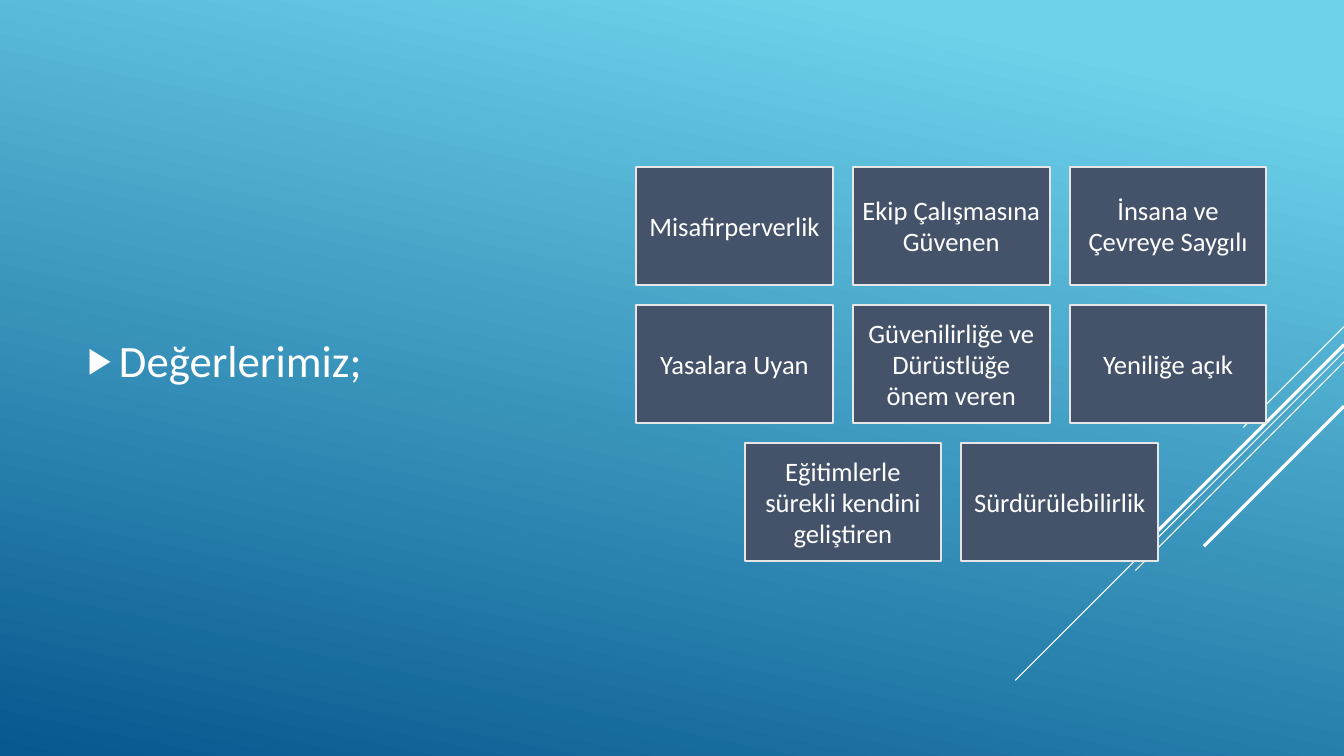
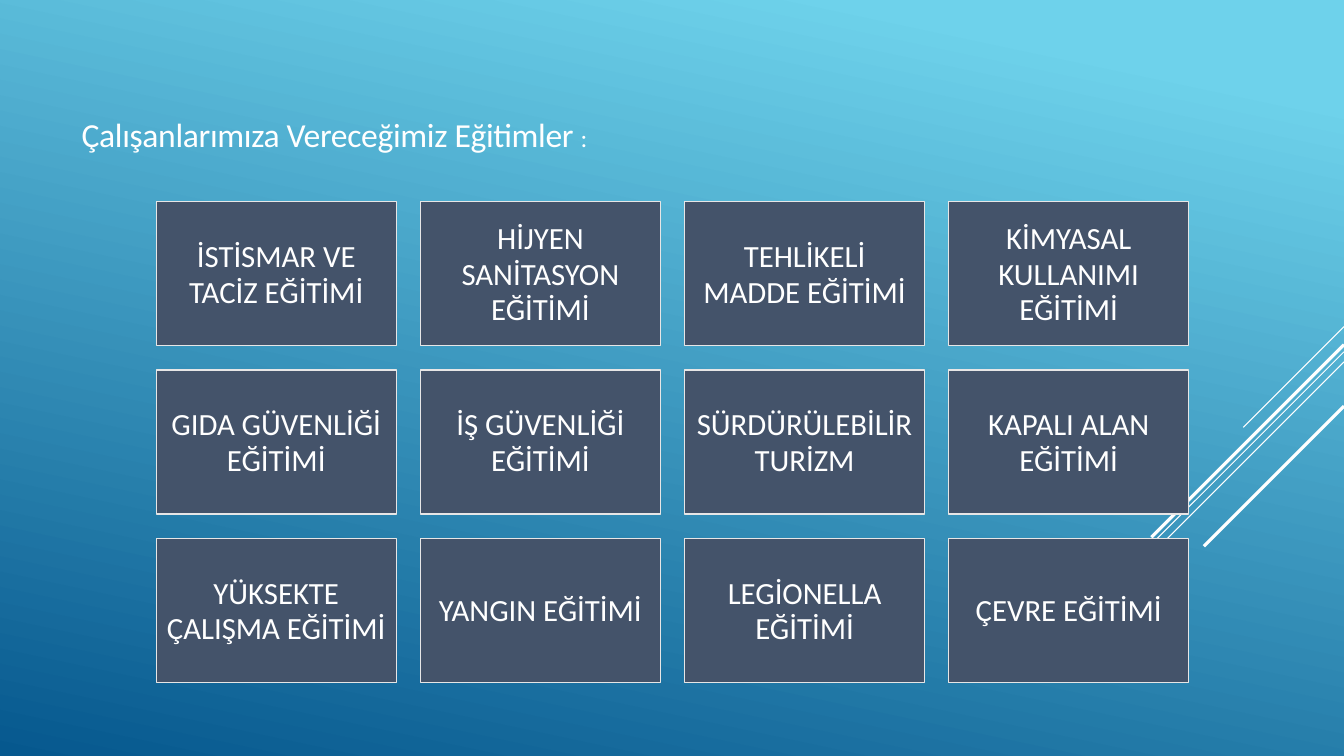
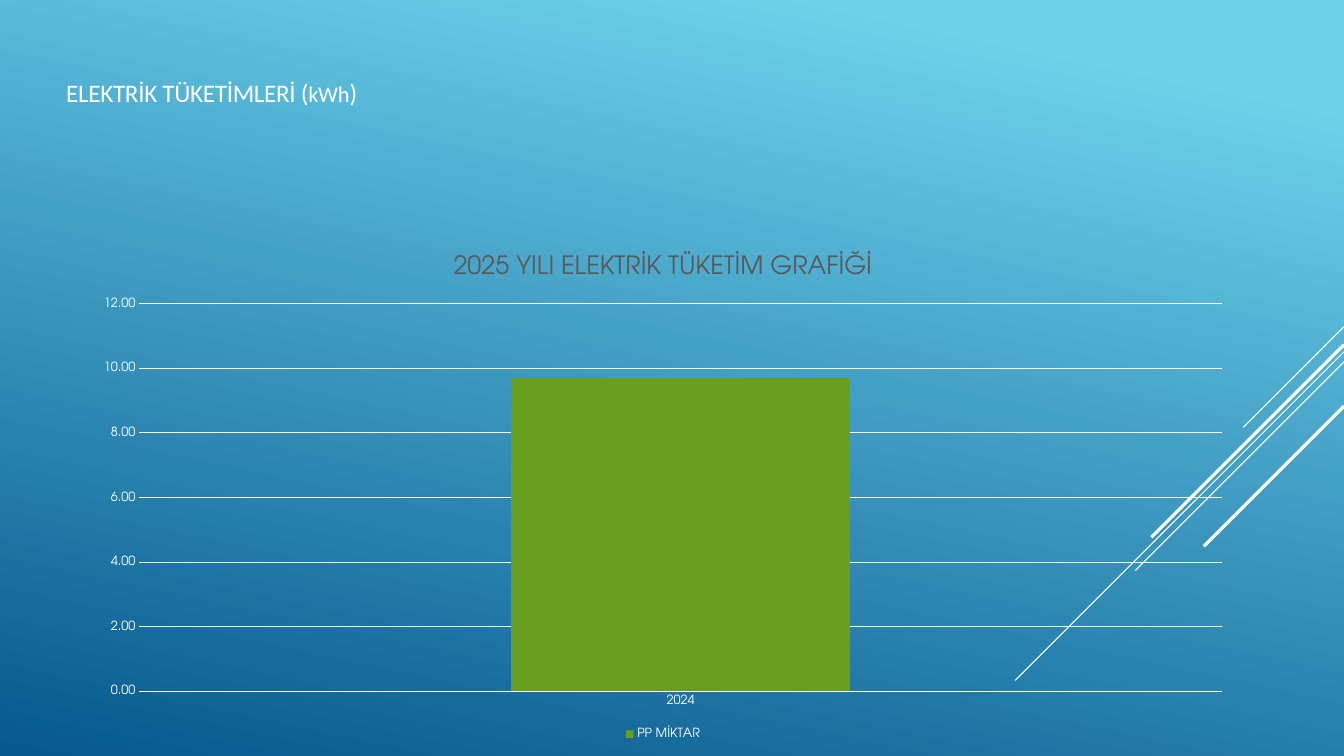
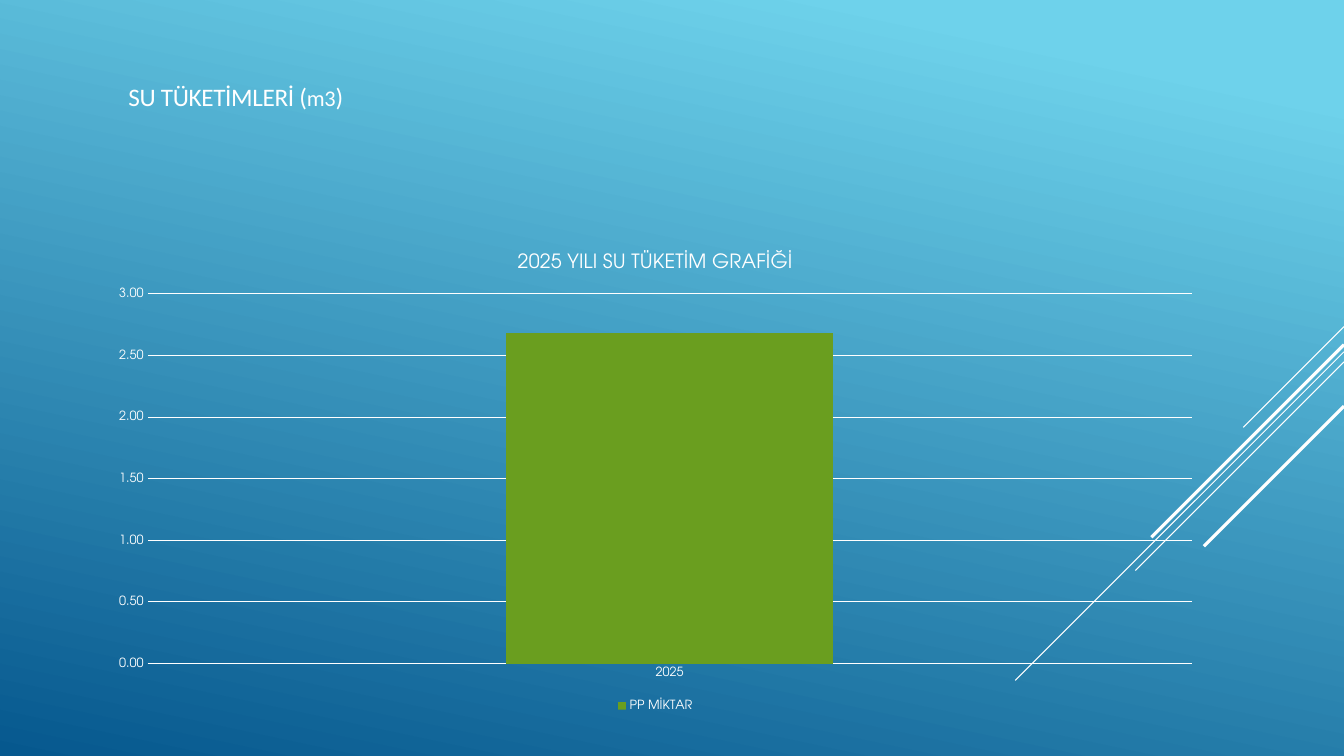
from lxml.etree import SubElement
from pptx import Presentation
from pptx.chart.data import CategoryChartData
from pptx.dml.color import RGBColor
from pptx.enum.chart import XL_CHART_TYPE as ChartType
from pptx.enum.chart import XL_LEGEND_POSITION as LegendPosition
from pptx.enum.chart import XL_TICK_MARK as TickMark
from pptx.enum.shapes import MSO_CONNECTOR as Connector
from pptx.enum.shapes import MSO_SHAPE as Shape
from pptx.enum.text import MSO_ANCHOR as Anchor
from pptx.enum.text import MSO_AUTO_SIZE as AutoSize
from pptx.enum.text import PP_ALIGN as Align
from pptx.oxml.ns import qn
from pptx.util import Inches, Pt

WHITE = "FFFFFF"
CARD_FILL = "44536A"
CARD_BORDER = "E7E6E6"
BAR_GREEN = "6A9E1F"
TITLE_GREY = "595959"
SKY = "6ED2EB"
DEEP_BLUE = "06588E"
TEXT_FONT = "Calibri"
CHART_FONT = "TeX Gyre Adventor"

CONTENT_LAYOUT, TITLE_LAYOUT = 1, 5
RIGHT_EDGE = 13.33
# Height at the right edge, run down to the left, line width
DIAGONALS = [
    (3.24, 1.0, 0.75),
    (3.49, 3.26, 0.75),
    (3.59, 2.07, 0.75),
    (3.42, 1.91, 2.25),
    (4.03, 1.39, 2.25),
]

VALUES = [
    ["Misafirperverlik", "Ekip Çalışmasına\nGüvenen", "İnsana ve\nÇevreye Saygılı"],
    ["Yasalara Uyan", "Güvenilirliğe ve\vDürüstlüğe\vönem veren", "Yeniliğe açık"],
    ["Eğitimlerle\vsürekli kendini\vgeliştiren", "Sürdürülebilirlik"],
]
TRAININGS = [
    ["İSTİSMAR VE\nTACİZ EĞİTİMİ", "HİJYEN\nSANİTASYON\nEĞİTİMİ",
     "TEHLİKELİ\nMADDE EĞİTİMİ", "KİMYASAL\vKULLANIMI\vEĞİTİMİ"],
    ["GIDA GÜVENLİĞİ\nEĞİTİMİ", "İŞ GÜVENLİĞİ\nEĞİTİMİ",
     "SÜRDÜRÜLEBİLİR\nTURİZM", "KAPALI ALAN\nEĞİTİMİ"],
    ["YÜKSEKTE\nÇALIŞMA EĞİTİMİ", "YANGIN EĞİTİMİ",
     "LEGİONELLA\nEĞİTİMİ", "ÇEVRE EĞİTİMİ"],
]


def rgb(color):
    return RGBColor.from_string(color)


def set_font(font, size, color=WHITE, name=TEXT_FONT):
    font.name = name
    font.size = Pt(size)
    font.bold = False
    font.color.rgb = rgb(color)


def place(shape, box):
    shape.left, shape.top, shape.width, shape.height = map(Inches, box)


class Deck:
    """Holds the shared style and the slide being filled."""

    def __init__(self):
        self.prs = Presentation()
        self.prs.slide_width = Inches(RIGHT_EDGE)
        self.prs.slide_height = Inches(7.5)
        self.slide = None

    def new_slide(self, layout):
        self.slide = self.prs.slides.add_slide(self.prs.slide_layouts[layout])

    def style_master(self):
        """Give the master its gradient and diagonals, drawn on the current slide and moved."""
        master = self.prs.slide_master
        fill = master.background.fill
        fill.gradient()
        fill.gradient_angle = 360 - 102
        for stop, position, color in zip(fill.gradient_stops, (0.1, 1), (SKY, DEEP_BLUE)):
            stop.position = position
            stop.color.rgb = rgb(color)
        for number, (top, run, width) in enumerate(DIAGONALS, 20):
            diagonal = self.slide.shapes.add_connector(
                Connector.STRAIGHT, Inches(RIGHT_EDGE), Inches(top),
                Inches(RIGHT_EDGE - run), Inches(top + run))
            diagonal.line.color.rgb = rgb(WHITE)
            diagonal.line.width = Pt(width)
            SubElement(diagonal.element.spPr, qn("a:effectLst"))
            diagonal.element.nvCxnSpPr.cNvPr.id = number
            master.element.cSld.spTree.append(diagonal.element)

    def title(self, parts, box, align=Align.LEFT):
        """Fill the title with (text, size) parts."""
        title = self.slide.shapes.title
        place(title, box)
        frame = title.text_frame
        frame.word_wrap = True
        frame.auto_size = AutoSize.NONE
        frame.vertical_anchor = Anchor.MIDDLE
        paragraph = frame.paragraphs[0]
        paragraph.alignment = align
        for text, size in parts:
            run = paragraph.add_run()
            run.text = text
            set_font(run.font, size)
        for properties in title.element.iter(qn("a:rPr")):
            properties.set("spc", "-25")

    def bullet(self, text, box):
        """Fill the body with one bullet and drop the unused title."""
        heading = self.slide.shapes.title.element
        heading.getparent().remove(heading)
        body = self.slide.placeholders[1]
        place(body, box)
        frame = body.text_frame
        frame.text = text
        frame.auto_size = AutoSize.NONE
        frame.vertical_anchor = Anchor.MIDDLE
        paragraph = frame.paragraphs[0]
        paragraph.space_before = Pt(0)
        set_font(paragraph.font, 32)
        for properties in body.element.iter(qn("a:pPr")):
            properties.set("marL", str(Inches(0.31)))
            properties.set("indent", str(-Inches(0.31)))
            marks = [SubElement(properties, qn("a:buClr")),
                     SubElement(properties, qn("a:buSzPct"), val="80000"),
                     SubElement(properties, qn("a:buChar"), char="▶")]
            SubElement(marks[0], qn("a:srgbClr"), val=WHITE)
            run_defaults = properties.find(qn("a:defRPr"))
            if run_defaults is not None:
                properties.append(run_defaults)

    def card(self, text, box, size, leading, border):
        card = self.slide.shapes.add_shape(Shape.RECTANGLE, *map(Inches, box))
        card.shadow.inherit = False
        card.fill.solid()
        card.fill.fore_color.rgb = rgb(CARD_FILL)
        card.line.color.rgb = rgb(CARD_BORDER)
        card.line.width = Pt(border)
        frame = card.text_frame
        frame.margin_left = frame.margin_right = 0
        frame.margin_top = frame.margin_bottom = 0
        frame.word_wrap = True
        frame.vertical_anchor = Anchor.MIDDLE
        frame.text = text
        for paragraph in frame.paragraphs:
            paragraph.alignment = Align.CENTER
            paragraph.line_spacing = Pt(leading)
            set_font(paragraph.font, size)

    def card_grid(self, rows, left, top, width, height, gap, **style):
        """Lay out rows of cards, centring rows shorter than the first."""
        for row_index, row in enumerate(rows):
            inset = (len(rows[0]) - len(row)) * (width + gap) / 2
            for column, text in enumerate(row):
                box = (left + inset + column * (width + gap),
                       top + row_index * (height + gap), width, height)
                self.card(text, box, **style)

    def usage_chart(self, title, year, amount, box, title_size, title_color):
        data = CategoryChartData(number_format="0.00")
        data.categories = [year]
        data.add_series("PP MİKTAR", [amount])
        chart = self.slide.shapes.add_chart(
            ChartType.COLUMN_CLUSTERED, *map(Inches, box), data).chart
        set_font(chart.font, 10, name=CHART_FONT)

        chart.has_title = True
        chart.chart_title.include_in_layout = False
        heading = chart.chart_title.text_frame
        heading.text = title
        set_font(heading.paragraphs[0].font, title_size, title_color, CHART_FONT)

        chart.has_legend = True
        chart.legend.position = LegendPosition.BOTTOM
        chart.legend.include_in_layout = False
        set_font(chart.legend.font, 9, name=CHART_FONT)

        years, amounts = chart.category_axis, chart.value_axis
        for axis in (years, amounts):
            axis.major_tick_mark = axis.minor_tick_mark = TickMark.NONE
            set_font(axis.tick_labels.font, 9, name=CHART_FONT)
        amounts.has_major_gridlines = True
        for line in (years.format.line, amounts.major_gridlines.format.line):
            line.color.rgb = rgb(WHITE)
            line.width = Pt(0.75)
        amounts.format.line.fill.background()
        amounts.tick_labels.number_format = "0.00"
        amounts.tick_labels.number_format_is_linked = False

        plot = chart.plots[0]
        plot.gap_width = 219
        plot.overlap = -27
        plot.vary_by_categories = False
        bar = plot.series[0].format.fill
        bar.solid()
        bar.fore_color.rgb = rgb(BAR_GREEN)


def main():
    deck = Deck()

    deck.new_slide(CONTENT_LAYOUT)
    deck.style_master()
    deck.bullet("Değerlerimiz;", (0.77, 1.77, 4.79, 3.6))
    deck.card_grid(VALUES, 6.31, 1.66, 1.95, 1.17, 0.2,
                   size=19, leading=21.9, border=1.44)

    deck.new_slide(TITLE_LAYOUT)
    deck.title([("Çalışanlarımıza Vereceğimiz Eğitimler ", 24), (":", 18)],
               (0.71, 1.08, 8.63, 0.5))
    deck.card_grid(TRAININGS, 1.55, 2, 2.38, 1.43, 0.24,
                   size=22, leading=25.4, border=0.96)

    deck.new_slide(TITLE_LAYOUT)
    deck.title([("ELEKTRİK TÜKETİMLERİ (", 18), ("kWh", 16), (")", 18)],
               (0.1, 0.72, 4, 0.4), Align.CENTER)
    deck.usage_chart("2025 YILI ELEKTRİK TÜKETİM GRAFİĞİ", "2024", 9.7,
                     (0.8, 2.31, 11.55, 5.07), 18, TITLE_GREY)

    deck.new_slide(TITLE_LAYOUT)
    deck.title([("SU TÜKETİMLERİ (", 18), ("m3", 16), (")", 18)],
               (0.34, 0.76, 4, 0.4), Align.CENTER)
    deck.usage_chart("2025 YILI SU TÜKETİM GRAFİĞİ", "2025", 2.68,
                     (0.96, 2.31, 11.08, 4.79), 14, WHITE)

    deck.prs.save("out.pptx")


if __name__ == "__main__":
    main()
